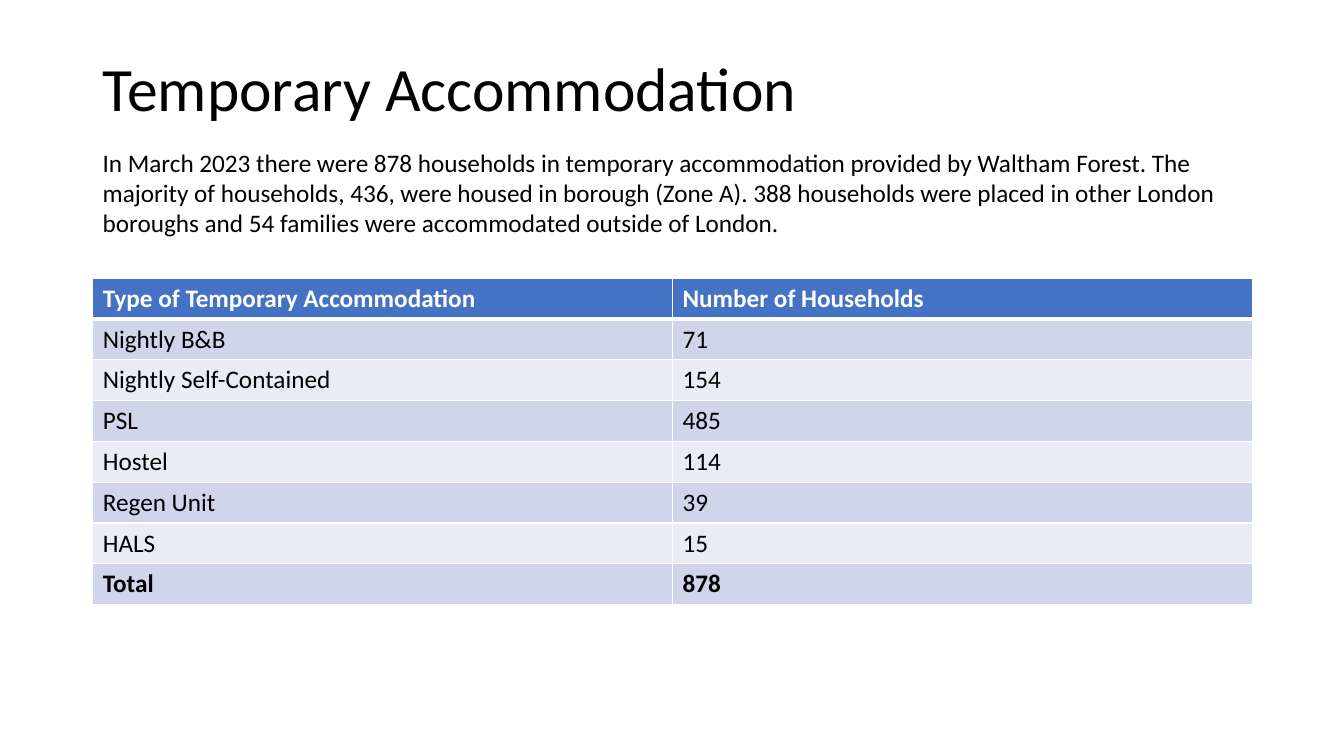
from lxml import etree
from pptx import Presentation
from pptx.dml.color import RGBColor
from pptx.enum.text import MSO_ANCHOR
from pptx.oxml.ns import qn
from pptx.util import Inches, Pt

TOP, MIDDLE = MSO_ANCHOR.TOP, MSO_ANCHOR.MIDDLE
FONT = "Calibri"
BLACK, WHITE, HEADER_BLUE = "000000", "FFFFFF", "4472C4"
BANDS = ("CFD5EA", "E9EBF5")
LEFT, CONTENT_WIDTH = 0.92, 11.5
TITLE_TOP, TEXT_TOP, TABLE_TOP = 0.4, 1.41, 2.76
TEXT_HEIGHT, TABLE_HEIGHT = 1.01, 3.24

TITLE = "Temporary Accommodation"
SUMMARY = (
    "In March 2023 there were 878 households in temporary accommodation provided by "
    "Waltham Forest. The majority of households, 436, were housed in borough (Zone A). "
    "388 households were placed in other London boroughs and 54 families were "
    "accommodated outside of London."
)
HOUSEHOLDS = [
    ("Type of Temporary Accommodation", "Number of Households"),
    ("Nightly B&B", "71"),
    ("Nightly Self-Contained", "154"),
    ("PSL", "485"),
    ("Hostel", "114"),
    ("Regen Unit", "39"),
    ("HALS", "15"),
    ("Total", "878"),
]


def color(hex_value):
    """Return the colour for a hex string."""
    return RGBColor.from_string(hex_value)


def write(text_frame, text, size=18, font_color=BLACK, bold=False):
    """Write one formatted paragraph and return it."""
    paragraph = text_frame.paragraphs[0]
    run = paragraph.add_run()
    run.text = text
    for name, value in {"name": FONT, "size": Pt(size), "bold": bold}.items():
        setattr(run.font, name, value)
    run.font.color.rgb = color(font_color)
    return paragraph


def add_text(slide, top, text, size=18, anchor=TOP):
    """Add a wrapped text box across the content width and return its paragraph."""
    box = slide.shapes.add_textbox(
        Inches(LEFT), Inches(top), Inches(CONTENT_WIDTH), Inches(TEXT_HEIGHT))
    box.text_frame.word_wrap = True
    box.text_frame.vertical_anchor = anchor
    return write(box.text_frame, text, size)


def set_borders(cell, widths):
    """Draw white cell borders from a dict of side and width in points."""
    properties = cell._tc.get_or_add_tcPr()
    for side, width in widths.items():
        line = etree.SubElement(properties, qn(f"a:ln{side}"), w=str(Pt(width)))
        fill = etree.SubElement(line, qn("a:solidFill"))
        etree.SubElement(fill, qn("a:srgbClr"), val=WHITE)


def add_banded_table(slide, rows):
    """Add a table with a header, banded rows and a bold last row."""
    last = len(rows) - 1
    table = slide.shapes.add_table(
        len(rows), len(rows[0]), Inches(LEFT), Inches(TABLE_TOP),
        Inches(CONTENT_WIDTH), Inches(TABLE_HEIGHT)).table
    for row_index, values in enumerate(rows):
        header = row_index == 0
        for column_index, value in enumerate(values):
            cell = table.cell(row_index, column_index)
            set_borders(cell, {"L": 1, "R": 1, "T": 3 if row_index == 1 else 1,
                               "B": 3 if header else 1})
            cell.fill.solid()
            cell.fill.fore_color.rgb = color(
                HEADER_BLUE if header else BANDS[(row_index - 1) % 2])
            write(cell.text_frame, value, font_color=WHITE if header else BLACK,
                  bold=row_index in (0, last))


def main():
    """Build and save the slide."""
    presentation = Presentation()
    presentation.slide_width, presentation.slide_height = Inches(13.33), Inches(7.5)
    slide = presentation.slides.add_slide(presentation.slide_layouts[6])
    title = add_text(slide, TITLE_TOP, TITLE, 44, MIDDLE)
    title.line_spacing = 0.9
    add_banded_table(slide, HOUSEHOLDS)
    add_text(slide, TEXT_TOP, SUMMARY)
    presentation.save("out.pptx")


if __name__ == "__main__":
    main()
